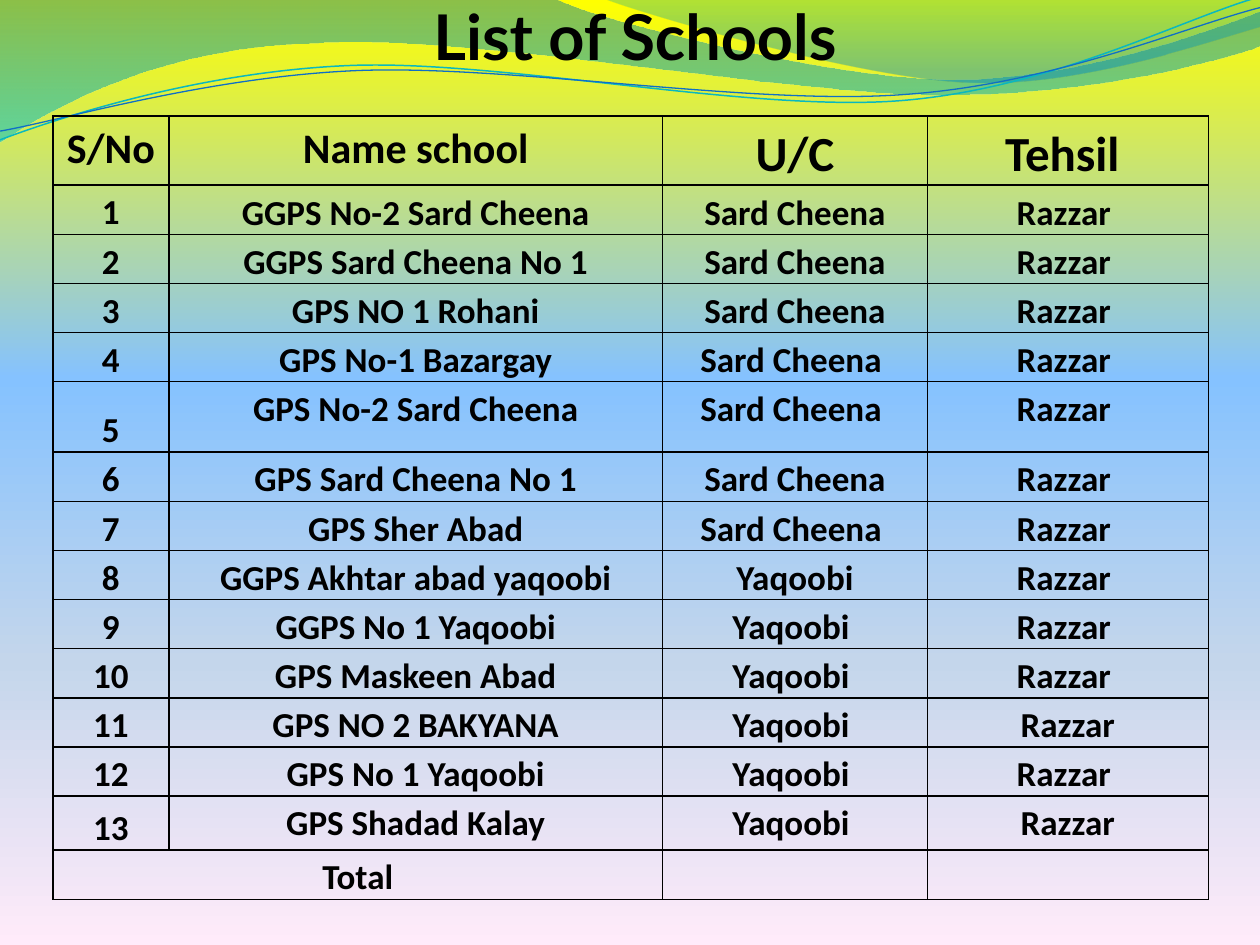
import math
from dataclasses import dataclass

from pptx import Presentation
from pptx import oxml
from pptx.dml.color import RGBColor
from pptx.enum import text
from pptx.oxml import ns
from pptx.util import Inches, Pt


@dataclass(frozen=True)
class Theme:
    """Colours, fonts and type sizes of the slide."""
    ink: str = "000000"
    title_font: str = "Lato"
    body_font: str = "Calibri"
    title_size: int = 36
    large_head_size: int = 28
    head_size: int = 24
    body_size: int = 20
    border_width: float = 1
    backdrop: tuple = ((0, "FFFF00", 100), (40, "85C2FF", 100),
                       (70, "C4D6EB", 100), (100, "FFEBFA", 100))
    left_wave: tuple = ((0, "0074A1", 45), (100, "00C6CF", 55))
    right_wave: tuple = ((0, "00A1A9", 30), (80, "008BBF", 45))
    upper_strand: str = "0AB8BF"
    lower_strand: str = "0F6FC6"


THEME = Theme()

LEFT_WAVE = [
    (0, 0), (4.4, -0.01),
    (4.76, 0.17, 6.64, 0.63, 7.58, 0.63), (8.53, 0.63, 9.58, 0.26, 10, 0.09),
    (10.01, 0.36),
    (9.83, 0.44, 8.7, 0.76, 7.46, 0.75), (6.22, 0.75, 3.82, 0.28, 2.57, 0.34),
    (1.29, 0.36, 0.46, 0.83, -0.01, 1.13), (0, 0)]
RIGHT_WAVE = [
    (4.79, -0.01),
    (5.09, 0.11, 6.82, 0.62, 7.69, 0.65), (8.56, 0.69, 9.61, 0.32, 10, 0.21),
    (10, 0), (4.79, -0.01)]
UPPER_STRAND = [
    (0, 1.11),
    (0.48, 0.93, 1.58, 0.57, 2.77, 0.52), (3.95, 0.47, 5.93, 0.89, 7.13, 0.8),
    (8.33, 0.71, 9.38, 0.15, 9.98, -0.02)]
LOWER_STRAND = [
    (0, 1.04),
    (0.47, 0.96, 1.64, 0.61, 2.83, 0.56), (4.03, 0.51, 5.97, 0.84, 7.17, 0.75),
    (8.36, 0.67, 9.41, 0.21, 10, 0.06)]
STRAND_TILT = -2.7

HEADINGS = ("S/No", "Name school", "U/C", "Tehsil ")
SCHOOLS = [
    ("GGPS No-2 Sard Cheena", "Sard Cheena", "Razzar "),
    ("GGPS Sard Cheena No 1", "Sard Cheena", "Razzar "),
    ("GPS NO 1 Rohani", "Sard Cheena", "Razzar "),
    ("GPS No-1 Bazargay", "Sard Cheena ", "Razzar "),
    ("GPS No-2 Sard Cheena", "Sard Cheena ", "Razzar "),
    ("GPS Sard Cheena No 1", "Sard Cheena", "Razzar "),
    ("GPS Sher Abad", "Sard Cheena ", "Razzar "),
    ("GGPS Akhtar abad yaqoobi", "Yaqoobi", "Razzar "),
    ("GGPS No 1 Yaqoobi", "Yaqoobi ", "Razzar "),
    ("GPS Maskeen Abad", "Yaqoobi ", "Razzar "),
    ("GPS NO 2 BAKYANA", "Yaqoobi ", "Razzar"),
    ("GPS No 1 Yaqoobi", "Yaqoobi ", "Razzar "),
    ("GPS Shadad Kalay", "Yaqoobi ", "Razzar"),
]
COLUMN_WIDTHS = (0.92, 3.92, 2.1, 2.23)
ROW_HEIGHT = 0.39
SPECIAL_HEIGHTS = {0: 0.55, 5: 0.56, 13: 0.43}


def set_gradient(fill, owner, stops):
    """Fill the owner element from top to bottom with (position, colour, opacity) stops."""
    fill.gradient()
    fill.gradient_angle = 270
    stop_list = owner.find(".//" + ns.qn("a:gsLst"))
    for stop in list(stop_list):
        stop_list.remove(stop)
    for position, colour, opacity in stops:
        alpha = f'<a:alpha val="{opacity * 1000}"/>' if opacity < 100 else ""
        stop_list.append(oxml.parse_xml(
            f'<a:gs {ns.nsdecls("a")} pos="{position * 1000}">'
            f'<a:srgbClr val="{colour}">{alpha}</a:srgbClr></a:gs>'))


def turn(point, centre, degrees):
    """Return a point turned clockwise about a centre."""
    dx, dy = point[0] - centre[0], point[1] - centre[1]
    cosine, sine = math.cos(math.radians(degrees)), math.sin(math.radians(degrees))
    return centre[0] + dx * cosine - dy * sine, centre[1] + dx * sine + dy * cosine


def add_outline(slide, outline, closed, tilt=0, centre=(0, 0)):
    """Draw corners and cubic curves as one freeform without shadow."""
    points = [pair for segment in outline for pair in zip(segment[::2], segment[1::2])]
    start, *others = [tuple(Inches(value) for value in turn(point, centre, -tilt))
                      for point in points]
    builder = slide.shapes.build_freeform(*start)
    builder.add_line_segments(others, close=closed)
    curve = builder.convert_to_shape()
    curve.rotation = tilt
    curve.shadow.inherit = False
    lines = iter(curve.element.findall(".//" + ns.qn("a:lnTo")))
    for segment in outline[1:]:
        first = next(lines)
        if len(segment) == 6:
            cubic = oxml.parse_xml(f'<a:cubicBezTo {ns.nsdecls("a")}/>')
            first.addprevious(cubic)
            for line in (first, next(lines), next(lines)):
                cubic.append(line[0])
                line.getparent().remove(line)
    return curve


def add_wave(slide, outline, stops):
    """Add a translucent wave band."""
    wave = add_outline(slide, outline, True)
    set_gradient(wave.fill, wave.element, stops)
    wave.line.fill.background()


def add_strand(slide, outline, centre, colour, width):
    """Add a thin tilted curve."""
    strand = add_outline(slide, outline, False, STRAND_TILT, centre)
    strand.fill.background()
    strand.line.color.rgb = RGBColor.from_string(colour)
    strand.line.width = Pt(width)


def write(frame, wording, font, size):
    """Set centred bold text and return its paragraph."""
    paragraph = frame.paragraphs[0]
    paragraph.text = wording
    paragraph.alignment = text.PP_ALIGN.CENTER
    for run in paragraph.runs:
        run.font.name = font
        run.font.size = Pt(size)
        run.font.bold = True
        run.font.color.rgb = RGBColor.from_string(THEME.ink)
    return paragraph


def add_title(slide, wording):
    """Add the slide title."""
    frame = slide.shapes.add_textbox(Inches(0.5), 0, Inches(9.08), Inches(0.58)).text_frame
    frame.word_wrap = True
    frame.vertical_anchor = text.MSO_ANCHOR.BOTTOM
    frame.margin_left = frame.margin_right = frame.margin_bottom = 0
    frame.margin_top = Inches(0.05)
    write(frame, wording, THEME.title_font, THEME.title_size)


def style_cell(cell):
    """Give a cell thin borders, no fill and narrow margins."""
    properties = cell._tc.get_or_add_tcPr()
    for side in ("lnL", "lnR", "lnT", "lnB"):
        properties.append(oxml.parse_xml(
            f'<a:{side} {ns.nsdecls("a")} w="{Pt(THEME.border_width)}"><a:solidFill>'
            f'<a:srgbClr val="{THEME.ink}"/></a:solidFill></a:{side}>'))
    cell.fill.background()
    cell.margin_left = cell.margin_right = Inches(0.06)
    cell.margin_top = cell.margin_bottom = 0


def add_school_table(slide):
    """Add the numbered list of schools with its total row."""
    rows = [HEADINGS]
    rows += [(str(number), *school) for number, school in enumerate(SCHOOLS, 1)]
    rows.append(("Total", "", "", ""))
    heights = [SPECIAL_HEIGHTS.get(index, ROW_HEIGHT) for index in range(len(rows))]
    table = slide.shapes.add_table(
        len(rows), len(COLUMN_WIDTHS), Inches(0.42), Inches(0.92),
        Inches(sum(COLUMN_WIDTHS)), Inches(sum(heights))).table
    table.first_row = table.horz_banding = False
    for column, width in zip(table.columns, COLUMN_WIDTHS):
        column.width = Inches(width)
    for row_index, (row, height) in enumerate(zip(rows, heights)):
        table.rows[row_index].height = Inches(height)
        for column_index, wording in enumerate(row):
            cell = table.cell(row_index, column_index)
            style_cell(cell)
            size = THEME.body_size
            if row_index == 0:
                size = THEME.head_size if column_index < 2 else THEME.large_head_size
            elif column_index == 0:
                cell.vertical_anchor = text.MSO_ANCHOR.BOTTOM
            if wording:
                paragraph = write(cell.text_frame, wording, THEME.body_font, size)
                paragraph.line_spacing = 1.15
                if row_index == 0 or column_index == 1:
                    paragraph.space_after = Pt(10)
    total_row = len(rows) - 1
    table.cell(total_row, 0).merge(table.cell(total_row, 1))


def main():
    """Build and save the slide."""
    deck = Presentation()
    deck.slide_width, deck.slide_height = Inches(10), Inches(7.5)
    slide = deck.slides.add_slide(deck.slide_layouts[6])
    set_gradient(slide.background.fill, slide.element, THEME.backdrop)
    add_wave(slide, LEFT_WAVE, THEME.left_wave)
    add_wave(slide, RIGHT_WAVE, THEME.right_wave)
    add_strand(slide, UPPER_STRAND, (4.99, 0.58), THEME.upper_strand, 0.85)
    add_strand(slide, LOWER_STRAND, (4.99, 0.59), THEME.lower_strand, 0.75)
    add_title(slide, "List of Schools")
    add_school_table(slide)
    deck.save("out.pptx")


if __name__ == "__main__":
    main()
